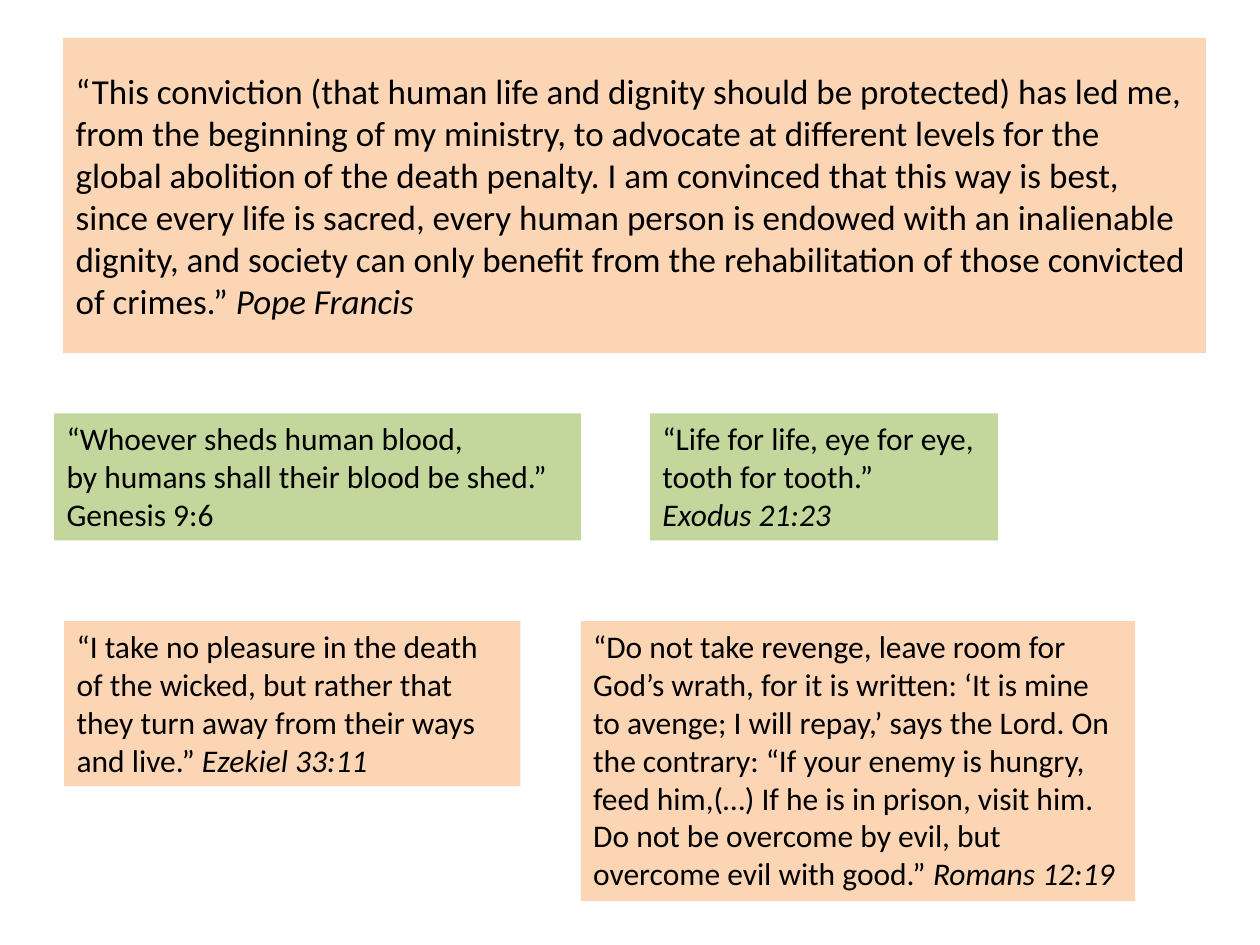
from pptx import Presentation
from pptx.dml.color import RGBColor
from pptx.enum.text import MSO_ANCHOR as Anchor, MSO_AUTO_SIZE as AutoSize, PP_ALIGN as Align
from pptx.util import Inches, Pt

PEACH = "FCD5B5"
GREEN = "C3D69B"
BLACK = "000000"

POPE = (
    "“This conviction (that human life and dignity should be protected) has led me, "
    "from the beginning of my ministry, to advocate at different levels for the global "
    "abolition of the death penalty. I am convinced that this way is best, since every "
    "life is sacred, every human person is endowed with an inalienable dignity, and "
    "society can only benefit from the rehabilitation of those convicted of crimes.” "
)
EZEKIEL = (
    "“I take no pleasure in the death of the wicked, but rather that they turn away "
    "from their ways and live.” "
)
ROMANS = (
    "“Do not take revenge, leave room for God’s wrath, for it is written: ‘It is mine "
    "to avenge; I will repay,’ says the Lord. On the contrary: “If your enemy is hungry, "
    "feed him,(…) If he is in prison, visit him. Do not be overcome by evil, but "
    "overcome evil with good.” "
)


def paint(fill, color):
    """Give a fill one solid hex colour."""
    fill.solid()
    fill.fore_color.rgb = RGBColor.from_string(color)


def write(frame, lines, size):
    """Write lines of (text, italic) spans, one paragraph per line."""
    for index, spans in enumerate(lines):
        para = frame.add_paragraph() if index else frame.paragraphs[0]
        para.alignment = Align.LEFT
        para.font.name = "Calibri"
        para.font.size = Pt(size)
        paint(para.font.fill, BLACK)
        for text, italic in spans:
            span = para.add_run()
            span.text = text
            if italic:
                span.font.italic = True


def lead_quote(page, box, lines):
    """Place the leading quotation in the title placeholder."""
    title = page.shapes.title
    title.left, title.top, title.width, title.height = map(Inches, box)
    paint(title.fill, PEACH)
    frame = title.text_frame
    frame.word_wrap = True
    frame.auto_size = AutoSize.NONE
    frame.vertical_anchor = Anchor.MIDDLE
    write(frame, lines, 20)


def scripture(page, box, color, lines, wrap):
    """Place one scripture quotation on a coloured panel."""
    panel = page.shapes.add_textbox(*map(Inches, box))
    paint(panel.fill, color)
    frame = panel.text_frame
    frame.word_wrap = wrap
    frame.auto_size = AutoSize.SHAPE_TO_FIT_TEXT
    write(frame, lines, 18)


def main():
    """Build the slide of quotations and save it."""
    deck = Presentation()
    deck.slide_width, deck.slide_height = Inches(10), Inches(7.5)
    page = deck.slides.add_slide(deck.slide_layouts[5])

    lead_quote(page, (0.5, 0.3, 9.07, 2.5), [[(POPE, False), ("Pope Francis", True)]])

    genesis = [
        [("“Whoever sheds human blood,", False)],
        [("by humans shall their blood be shed.”", False)],
        [("Genesis 9:6", False)],
    ]
    exodus = [
        [("“Life for life, eye for eye,", False)],
        [("tooth for tooth.”", False)],
        [("Exodus 21:23", True)],
    ]
    ezekiel = [[(EZEKIEL, False), ("Ezekiel 33:11", True)]]
    romans = [[(ROMANS, False), ("Romans 12:19", True)]]

    scripture(page, (0.43, 3.28, 4.18, 1.01), GREEN, genesis, False)
    scripture(page, (5.16, 3.28, 2.76, 1.01), GREEN, exodus, False)
    scripture(page, (0.51, 4.93, 3.62, 1.31), PEACH, ezekiel, True)
    scripture(page, (4.61, 4.93, 4.4, 2.22), PEACH, romans, True)

    deck.save("out.pptx")


if __name__ == "__main__":
    main()
